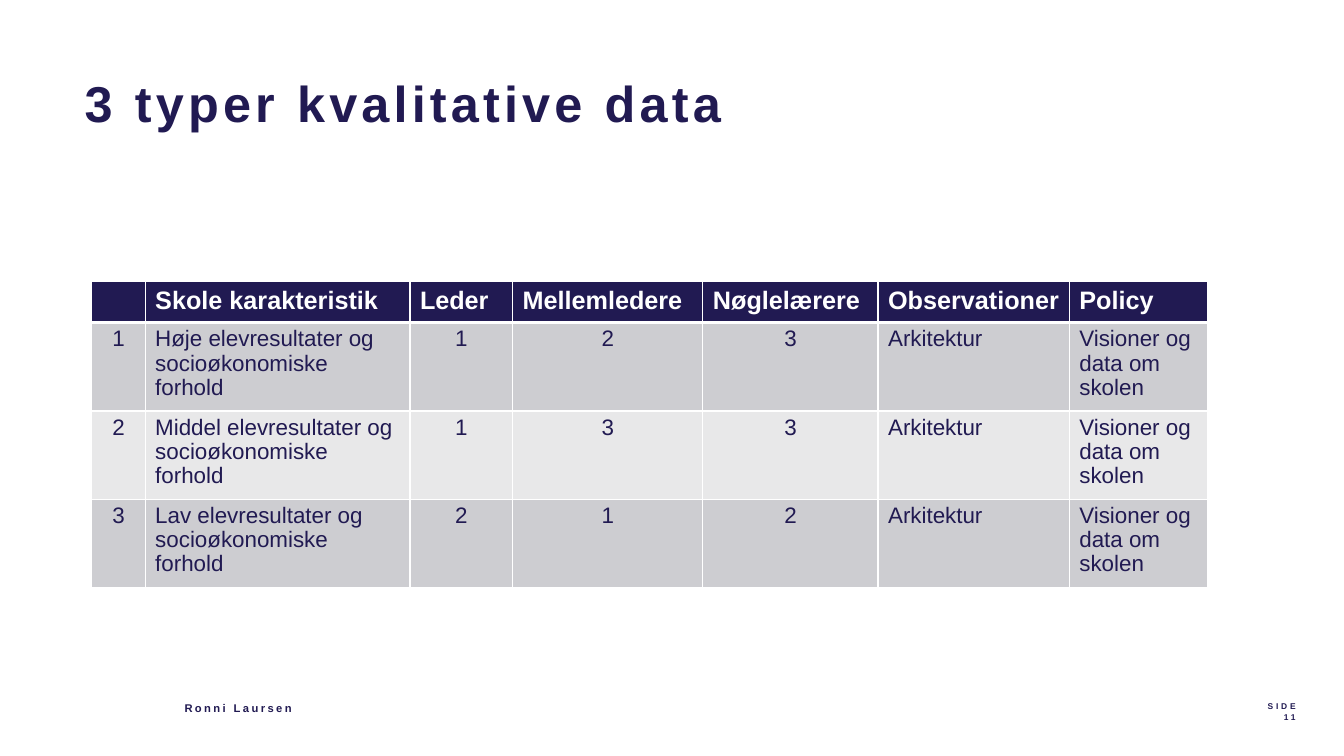
from lxml import etree
from pptx import Presentation
from pptx.dml.color import RGBColor
from pptx.enum.text import PP_ALIGN
from pptx.oxml.ns import qn
from pptx.util import Inches, Pt

SLIDE_WIDTH, SLIDE_HEIGHT = Inches(13.33), Inches(7.5)
NAVY, WHITE = "211A52", "FFFFFF"
BANDS = ("CDCDD1", "E8E8E9")
COLUMN_WEIGHTS = (0.53, 2.63, 1.02, 1.89, 1.74, 1.9, 1.37)
CENTRED_COLUMNS = (0, 2, 3, 4)
HEADINGS = ("", "Skole karakteristik", "Leder", "Mellemledere",
            "Nøglelærere", "Observationer", "Policy")
SCHOOLS = (("Høje", 1, 2, 3), ("Middel", 1, 3, 3), ("Lav", 2, 1, 2))


def across(percent):
    return round(SLIDE_WIDTH * percent / 100)


def down(percent):
    return round(SLIDE_HEIGHT * percent / 100)


def color(value):
    return RGBColor.from_string(value)


def add_run(paragraph, text, size, fill, bold=False, spacing=0):
    run = paragraph.add_run()
    run.text = text
    run.font.name = "Arial"
    run.font.size = Pt(size)
    run.font.bold = bold
    run.font.color.rgb = color(fill)
    if spacing:
        run.font._element.set("spc", str(round(spacing * 100)))


def add_label(slide, box, lines, size, spacing, align=PP_ALIGN.LEFT):
    """Add bold, letter-spaced lines; box is in percent of the slide."""
    left, top, width, height = box
    shape = slide.shapes.add_textbox(across(left), down(top),
                                     across(width), down(height))
    frame = shape.text_frame
    frame.word_wrap = True
    frame.margin_left = frame.margin_top = 0
    frame.margin_right = frame.margin_bottom = 0
    for index, line in enumerate(lines):
        paragraph = frame.add_paragraph() if index else frame.paragraphs[0]
        paragraph.alignment = align
        add_run(paragraph, line, size, NAVY, True, spacing)


def add_borders(cell, bottom_width):
    properties = cell._tc.get_or_add_tcPr()
    for side, width in zip("LRTB", (1, 1, 1, bottom_width)):
        line = etree.SubElement(properties, qn(f"a:ln{side}"), w=str(Pt(width)))
        solid = etree.SubElement(line, qn("a:solidFill"))
        etree.SubElement(solid, qn("a:srgbClr"), val=WHITE)


def fill_cell(cell, text, fill, header, align):
    add_borders(cell, 3 if header else 1)
    cell.fill.solid()
    cell.fill.fore_color.rgb = color(fill)
    paragraph = cell.text_frame.paragraphs[0]
    paragraph.alignment = align
    if not header:
        paragraph.line_spacing = 0.97
    if text:
        add_run(paragraph, text, 18 if header else 16,
                WHITE if header else NAVY, header)


def school_rows():
    for number, (level, *counts) in enumerate(SCHOOLS, 1):
        yield (str(number), f"{level} elevresultater og socioøkonomiske forhold",
               *map(str, counts), "Arkitektur", "Visioner og data om skolen")


def add_school_table(slide):
    rows = [HEADINGS, *school_rows()]
    width = across(83)
    table = slide.shapes.add_table(len(rows), len(HEADINGS), across(6.83),
                                   down(37.2), width, down(39.2)).table
    for column, weight in zip(table.columns, COLUMN_WEIGHTS):
        column.width = round(width * weight / sum(COLUMN_WEIGHTS))
    for row_index, texts in enumerate(rows):
        header = row_index == 0
        table.rows[row_index].height = down(5.47 if header else 11.24)
        fill = NAVY if header else BANDS[(row_index - 1) % 2]
        for column_index, text in enumerate(texts):
            centred = not header and column_index in CENTRED_COLUMNS
            fill_cell(table.cell(row_index, column_index), text, fill, header,
                      PP_ALIGN.CENTER if centred else PP_ALIGN.LEFT)


def main():
    presentation = Presentation()
    presentation.slide_width = SLIDE_WIDTH
    presentation.slide_height = SLIDE_HEIGHT
    slide = presentation.slides.add_slide(presentation.slide_layouts[6])
    add_label(slide, (84.77, 92.8, 11.63, 4.13), ("SIDE", "11"), 6, 2,
              PP_ALIGN.RIGHT)
    add_label(slide, (6.3, 9.6, 49.06, 20.53), ("3 typer kvalitative data",), 36, 3)
    add_label(slide, (13.73, 92.8, 14.03, 4.13), ("Ronni Laursen",), 8, 1.7)
    add_school_table(slide)
    presentation.save("out.pptx")


if __name__ == "__main__":
    main()
